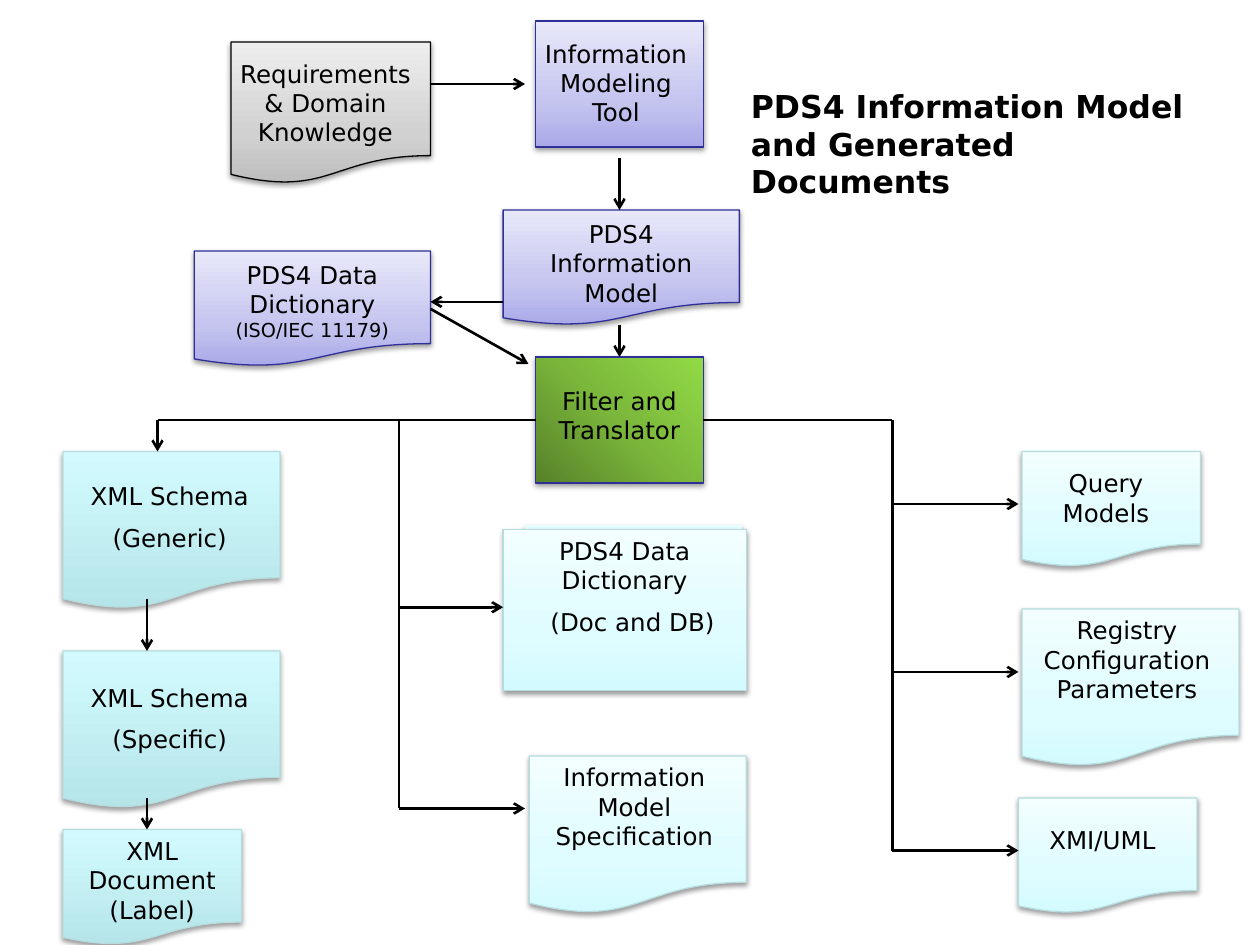
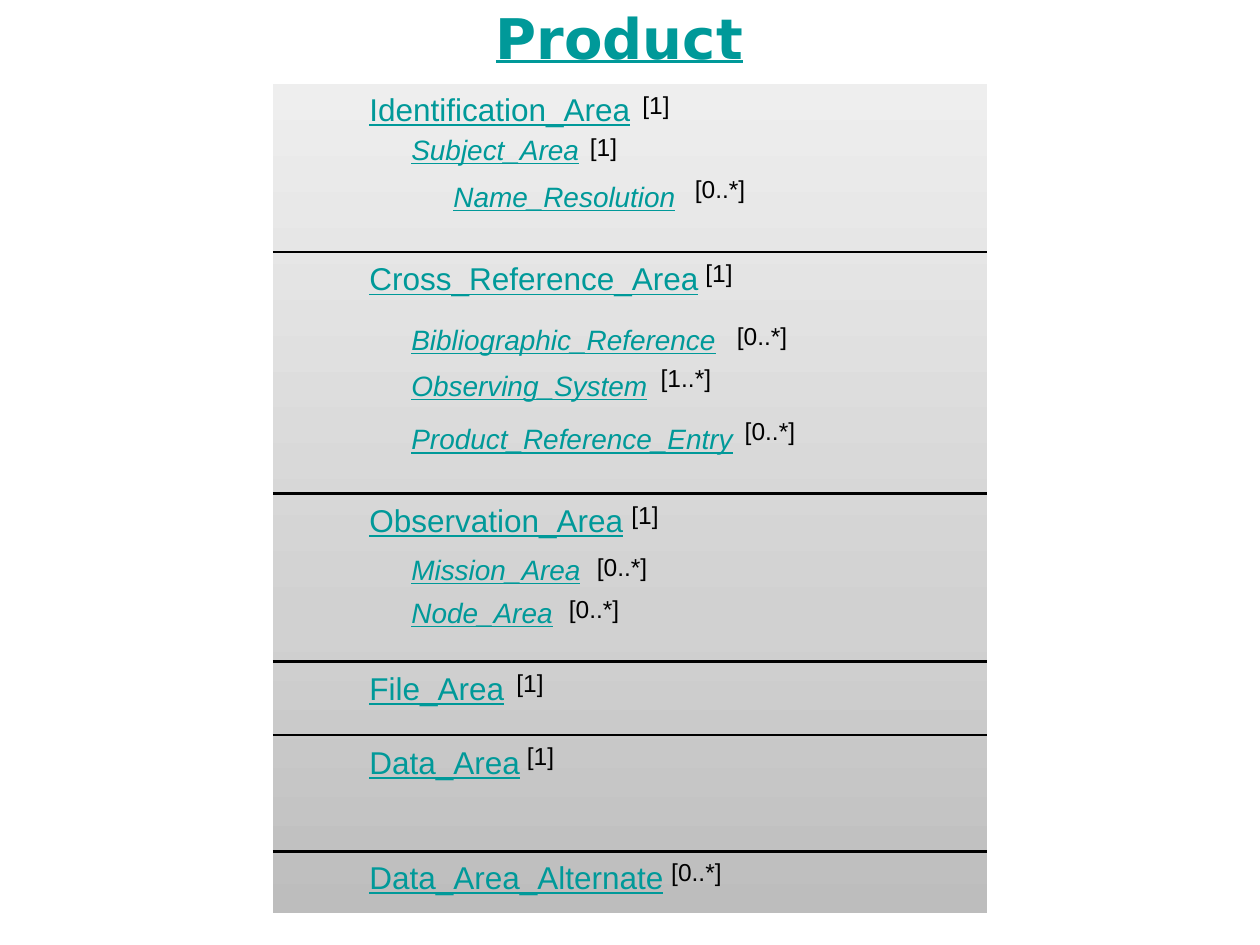
from lxml.etree import SubElement as Sub
from pptx import Presentation
from pptx.dml.color import RGBColor as Rgb
from pptx.enum.shapes import MSO_CONNECTOR as Conn, MSO_SHAPE as Kind
from pptx.enum.text import MSO_ANCHOR as Anchor, PP_ALIGN as Align
from pptx.oxml.ns import qn
from pptx.util import Pt

HUES = {"ink": "000000", "teal": "009999", "navy": "2F2F98", "aqua": "B6DCDF"}
FADES = {
    "gray": [(0, "BDBDBD"), (35, "D1D1D1"), (100, "EEEEEE")],
    "blue": [(0, "A9A9E9"), (35, "C4C4EF"), (100, "E8E8FA")],
    "pale": [(0, "D3FBFF"), (35, "DFFCFF"), (100, "F2FEFF")],
    "cyan": [(0, "B5E5E9"), (100, "D3FBFF")],
    "mist": [(0, "D7F0F2"), (100, "E6FDFF")],
    "green": [(0, "57812A"), (50, "7BB73B"), (100, "92DA46")],
}
EDGES = {"gray": "ink", "blue": "navy", "green": "navy", "pale": "aqua", "cyan": "aqua"}
SANS, ARIAL = "DejaVu Sans", "Arial"


class Deck:
    def __init__(self):
        self.show = Presentation()
        self.show.slide_width, self.show.slide_height = Pt(720), Pt(540)
        self.slide = None

    def page(self):
        self.slide = self.show.slides.add_slide(self.show.slide_layouts[6])

    def shape(self, kind, box, fade, edge=None, shade=True):
        item = self.slide.shapes.add_shape(kind, *map(Pt, box))
        item.fill.gradient()
        item.fill.gradient_angle = 45 if fade == "green" else 90
        props = item._element.spPr
        stops = props.find(qn("a:gradFill")).find(qn("a:gsLst"))
        for stop in list(stops):
            stops.remove(stop)
        for place, hue in FADES[fade]:
            stop = Sub(stops, qn("a:gs"), pos=str(place * 1000))
            Sub(stop, qn("a:srgbClr"), val=hue)
        if edge:
            item.line.color.rgb = Rgb.from_string(HUES[edge])
            item.line.width = Pt(0.75)
        else:
            item.line.fill.background()
        item.shadow.inherit = False
        if shade:
            cast = Sub(props.find(qn("a:effectLst")), qn("a:outerShdw"),
                       blurRad=str(Pt(3.1)), dist=str(Pt(1.6)),
                       dir="5400000", rotWithShape="0")
            tint = Sub(cast, qn("a:srgbClr"), val=HUES["ink"])
            Sub(tint, qn("a:alpha"), val="38000")
        return item

    def text(self, box, paras, **style):
        item = self.slide.shapes.add_textbox(*map(Pt, box))
        self.letter(item.text_frame, paras, **style)

    def letter(self, frame, paras, size=14, font=SANS, hue="ink", align=Align.CENTER,
               anchor=Anchor.TOP, wrap=True, bold=False, slant=False, under=False):
        frame.word_wrap = wrap
        frame.vertical_anchor = anchor
        for rank, runs in enumerate(paras):
            para = frame.add_paragraph() if rank else frame.paragraphs[0]
            para.alignment = align
            if rank:
                para.space_before = Pt(7)
            for part in runs:
                words, points = part if isinstance(part, tuple) else (part, size)
                run = para.add_run()
                run.text = words
                face = run.font
                face.name, face.size = font, Pt(points)
                face.bold, face.italic, face.underline = bold, slant, under
                face.color.rgb = Rgb.from_string(HUES[hue])

    def line(self, start, end, arrow=False):
        item = self.slide.shapes.add_connector(Conn.STRAIGHT, *map(Pt, start + end))
        item.line.color.rgb = Rgb.from_string(HUES["ink"])
        item.line.width = Pt(1.5)
        if arrow:
            Sub(item.line._get_or_add_ln(), qn("a:tailEnd"), type="arrow")
        Sub(item._element.spPr, qn("a:effectLst"))


DOC, STEP = Kind.FLOWCHART_DOCUMENT, Kind.FLOWCHART_PROCESS
CARDS = [
    (DOC, (132, 24, 114, 81), "gray", (126, 30, 120, 58), [["Requirements & Domain Knowledge"]]),
    (DOC, (287.5, 120, 135, 66), "blue", (287.5, 121.5, 135, 58), [["PDS4 Information Model"]]),
    (DOC, (584, 258, 102, 66), "pale", (590, 264, 84, 41), [["Query Models"]]),
    (DOC, (302.5, 432, 124, 90), "pale", (302.5, 432, 120, 58), [["Information Model Specification"]]),
    (DOC, (36, 258, 124, 90), "cyan", (23, 271.5, 148, 50), [["XML Schema"], ["(Generic)"]]),
    (STEP, (306, 204, 96, 72), "green", (306, 217, 96, 41), [["Filter and Translator"]]),
    (STEP, (306, 12, 96, 72), "blue", (302, 18.5, 100, 58), [["Information Modeling Tool"]]),
    (DOC, (36, 372, 124, 90), "cyan", (23, 386.5, 148, 50), [["XML Schema"], ["(Specific)"]]),
    (DOC, (36, 474, 102, 66), "cyan", (36, 474, 102, 58), [["XML Document (Label)"]]),
    (DOC, (582, 456, 102, 66), "pale", (588, 468, 84, 25), [["XMI/UML"]]),
    (DOC, (584, 348, 124, 90), "pale", (584, 348, 120, 58), [["Registry Configuration Parameters"]]),
    (DOC, (111, 143.5, 135, 66), "blue", (111, 145, 135, 55),
     [["PDS4 Data Dictionary ", ("(ISO/IEC 11179)", 11)]]),
]
WIRES = [
    ((510, 240), (402, 240)), ((306, 240), (90, 240)),
    ((510, 486), (510, 240)), ((228, 462), (228, 240)),
]
ARROWS = [
    ((510, 288), (582, 288)), ((510, 384), (582, 384)), ((510, 486), (582, 486)),
    ((90, 240), (90, 258)), ((84, 342), (84, 372)), ((84, 456), (84, 474)),
    ((228, 347), (287.5, 347)), ((228, 462), (300, 462)), ((246, 48), (300, 48)),
    ((354, 90), (354, 120)), ((354, 186), (354, 204)),
    ((287.5, 172.5), (246, 172.5)), ((246, 176.5), (302, 208)),
]
RULES = [144, 282, 378, 420, 486.75]
AREAS = [
    (0, 48, "Identification_Area", 360, 48, "[1]"),
    (1, 72, "Subject_Area", 330, 72, "[1]"),
    (2, 99, "Name_Resolution", 390, 96, "[0..*]"),
    (0, 144.75, "Cross_Reference_Area", 396, 144, "[1]"),
    (1, 180.75, "Bibliographic_Reference", 414, 180, "[0..*]"),
    (1, 207, "Observing_System", 370.5, 204, "[1..*]"),
    (1, 237.5, "Product_Reference_Entry", 418.5, 234, "[0..*]"),
    (0, 282.75, "Observation_Area", 353.75, 282, "[1]"),
    (1, 312, "Mission_Area", 334, 312, "[0..*]"),
    (1, 336.75, "Node_Area", 318, 336, "[0..*]"),
    (0, 378.75, "File_Area", 288, 378, "[1]"),
    (0, 421, "Data_Area", 294, 420, "[1]"),
    (0, 486.75, "Data_Area_Alternate", 376.5, 486, "[0..*]"),
]


def draw_model(deck):
    deck.page()
    for kind, box, fade, place, paras in CARDS:
        deck.shape(kind, box, fade, EDGES[fade])
        deck.text(place, paras)
    deck.shape(DOC, (300, 300, 124, 90), "mist")
    sheet = deck.shape(Kind.RECTANGLE, (287.5, 302.5, 139, 92), "pale", "aqua")
    deck.letter(sheet.text_frame, [["PDS4 Data Dictionary"], ["(Doc and DB)"]])
    sheet.text_frame.paragraphs[1]._p.get_or_add_pPr().set("marL", str(Pt(9)))
    for start, end in WIRES:
        deck.line(start, end)
    for start, end in ARROWS:
        deck.line(start, end, arrow=True)
    deck.text((422, 46, 284, 73), [["PDS4 Information Model and Generated Documents"]],
              size=18, bold=True, align=Align.LEFT)


def draw_product(deck):
    deck.page()
    deck.text((30, 0, 648, 42), [["Product"]], size=32, hue="teal",
              bold=True, under=True, anchor=Anchor.MIDDLE)
    deck.shape(Kind.RECTANGLE, (156, 48, 408, 474), "gray", shade=False)
    for y in RULES:
        deck.line((156, y), (564, y))
    for level, top, name, left, high, count in AREAS:
        deck.text((204 + 24 * level, top, 300, 29), [[name]], size=16 if level else 18,
                  font=ARIAL, hue="teal", slant=level > 0, under=True, align=Align.LEFT)
        deck.text((left, high, 30 if count == "[1]" else 44, 24), [[count]],
                  font=ARIAL, wrap=False, align=Align.LEFT)


def main():
    deck = Deck()
    draw_model(deck)
    draw_product(deck)
    deck.show.save("out.pptx")


if __name__ == "__main__":
    main()
